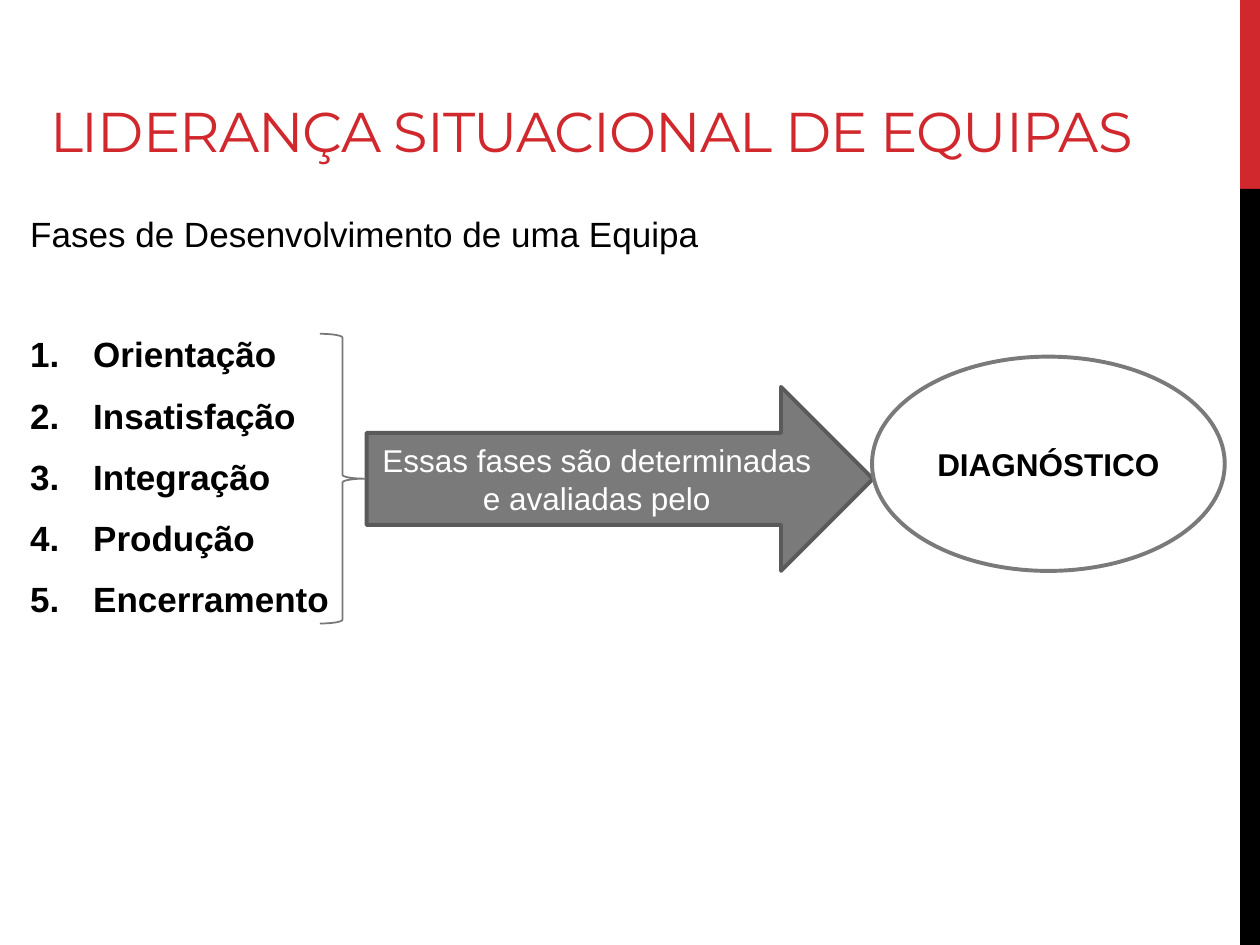
from dataclasses import dataclass
from typing import Any

from lxml import etree
from pptx import Presentation
from pptx import util as u
from pptx.dml import color
from pptx.enum import shapes, text
from pptx.oxml import ns

RED, BLACK, WHITE = "D1282E", "000000", "FFFFFF"
GREY, DARK_GREY, BRACE_GREY = "7A7A7A", "5A5A5A", "777777"
PHASES = ["Orientação", "Insatisfação", "Integração", "Produção", "Encerramento"]


def rgb(value):
    return color.RGBColor.from_string(value)


@dataclass
class SlideBuilder:
    page: Any
    body_font: str = "Arial"
    title_font: str = "Montserrat"

    def style(self, para, size, shade, bold=False, name=None):
        para.font.name = name or self.body_font
        para.font.size = u.Pt(size)
        para.font.bold = bold
        para.font.color.rgb = rgb(shade)

    def text_box(self, left, top, width, height, anchor=text.MSO_ANCHOR.TOP):
        box = self.page.shapes.add_textbox(*map(u.Cm, (left, top, width, height)))
        box.text_frame.word_wrap = True
        box.text_frame.vertical_anchor = anchor
        return box.text_frame

    def title(self, wording, *place):
        para = self.text_box(*place, anchor=text.MSO_ANCHOR.BOTTOM).paragraphs[0]
        span = para.add_run()
        span.text = wording
        span._r.get_or_add_rPr().set("spc", "-60")
        self.style(para, 32, RED, name=self.title_font)

    def numbered_list(self, heading, items, *place):
        frame = self.text_box(*place)
        para = frame.paragraphs[0]
        para.text = heading
        para.space_after = u.Pt(6)
        self.style(para, 20, BLACK)
        for index, item in enumerate(items):
            para = frame.add_paragraph()
            para.text = item
            para.space_before = u.Pt(5 if index else 39)
            para.space_after = u.Pt(6)
            self.style(para, 20, BLACK, bold=True)
            properties = para._p.get_or_add_pPr()
            properties.set("marL", str(u.Cm(1.27)))
            properties.set("indent", str(-u.Cm(1.27)))
            bullet = etree.Element(ns.qn("a:buAutoNum"), type="arabicPeriod")
            properties.find(ns.qn("a:defRPr")).addprevious(bullet)

    def shape(self, kind, *place, fill=None, line=None, weight=2.25):
        box = self.page.shapes.add_shape(kind, *map(u.Cm, place))
        box.shadow.inherit = False
        if fill:
            box.fill.solid()
            box.fill.fore_color.rgb = rgb(fill)
        else:
            box.fill.background()
        if line:
            box.line.color.rgb = rgb(line)
            box.line.width = u.Pt(weight)
        else:
            box.line.fill.background()
        return box

    def label(self, box, wording, shade, bold=False):
        frame = box.text_frame
        frame.word_wrap = True
        frame.vertical_anchor = text.MSO_ANCHOR.MIDDLE
        para = frame.paragraphs[0]
        para.text = wording
        para.alignment = text.PP_ALIGN.CENTER
        self.style(para, 18, shade, bold)


def main():
    deck = Presentation()
    deck.slide_width, deck.slide_height = u.Cm(25.4), u.Cm(19.05)
    slide = SlideBuilder(deck.slides.add_slide(deck.slide_layouts[6]))
    kinds = shapes.MSO_SHAPE

    slide.shape(kinds.RECTANGLE, 25, 0, 0.4, 3.81, fill=RED)
    slide.shape(kinds.RECTANGLE, 25, 3.81, 0.4, 15.24, fill=BLACK)
    slide.title("LIDERANÇA SITUACIONAL DE EQUIPAS", 0.76, 1.32, 23.9, 2.11)
    slide.numbered_list("Fases de Desenvolvimento de uma Equipa", PHASES,
                        0.36, 4.15, 24.2, 9.6)

    arrow = slide.shape(kinds.RIGHT_ARROW, 7.39, 7.8, 10.21, 3.71,
                        fill=GREY, line=DARK_GREY)
    slide.label(arrow, "Essas fases são determinadas e avaliadas pelo", WHITE)
    oval = slide.shape(kinds.OVAL, 17.58, 7.19, 7.11, 4.32, fill=WHITE, line=GREY)
    slide.label(oval, "DIAGNÓSTICO", BLACK, bold=True)
    slide.shape(kinds.RIGHT_BRACE, 6.45, 6.73, 0.91, 5.84, line=BRACE_GREY, weight=1)

    deck.save("out.pptx")


if __name__ == "__main__":
    main()
